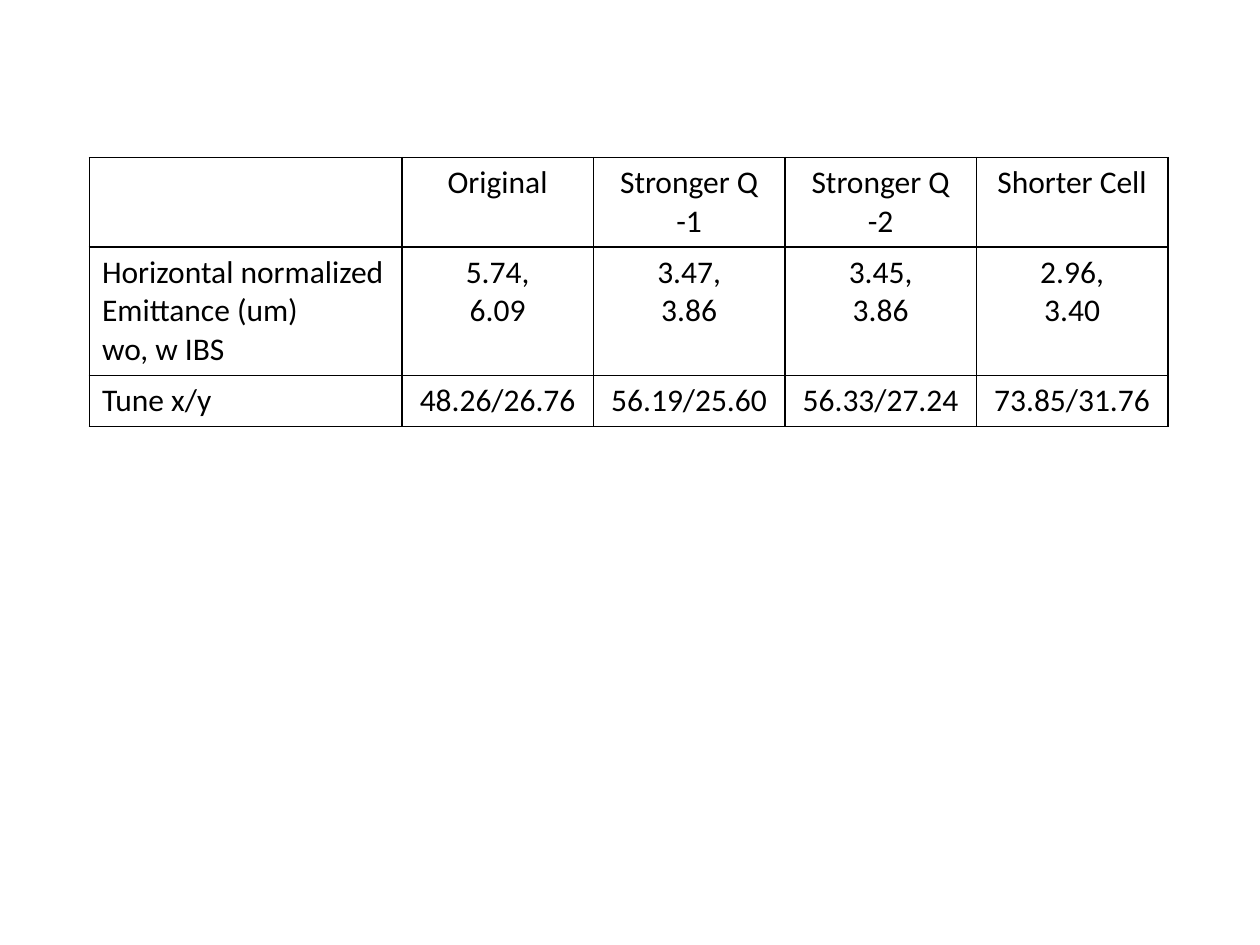
"""Build a slide with a bordered table comparing lattice options."""
from lxml import etree
from pptx import Presentation
from pptx.dml.color import RGBColor
from pptx.enum.text import PP_ALIGN
from pptx.oxml.ns import qn
from pptx.util import Inches, Pt

LEFT, CENTER = PP_ALIGN.LEFT, PP_ALIGN.CENTER
BLACK = RGBColor(0, 0, 0)
FONT, FONT_SIZE = "Calibri", Pt(18)
BORDER_WIDTH = Pt(1)

ROWS = [
    ["", "Original", "Stronger Q -1", "Stronger Q -2", "Shorter Cell"],
    ["Horizontal normalized Emittance (um)\nwo, w IBS",
     "5.74,\n6.09", "3.47,\n3.86", "3.45,\n3.86", "2.96,\n3.40"],
    ["Tune x/y", "48.26/26.76", "56.19/25.60", "56.33/27.24", "73.85/31.76"],
]
TABLE_LEFT, TABLE_TOP = 0.71, 1.25
LABEL_WIDTH, VALUE_WIDTH = 2.48, 1.52
ROW_HEIGHTS = [0.71, 1.02, 0.4]


def add_borders(cell):
    """Draw a solid line on every side of the cell."""
    properties = cell._tc.get_or_add_tcPr()
    for side in ("a:lnL", "a:lnR", "a:lnT", "a:lnB"):
        line = etree.SubElement(properties, qn(side), w=str(BORDER_WIDTH))
        fill = etree.SubElement(line, qn("a:solidFill"))
        etree.SubElement(fill, qn("a:srgbClr"), val=str(BLACK))


def fill_cell(cell, text, alignment):
    """Write and format the text of one cell."""
    add_borders(cell)
    cell.fill.background()
    cell.text_frame.text = text
    for paragraph in cell.text_frame.paragraphs:
        paragraph.alignment = alignment
        for run in paragraph.runs:
            run.font.name = FONT
            run.font.size = FONT_SIZE
            run.font.bold = False
            run.font.color.rgb = BLACK


def main():
    """Create and save the presentation."""
    presentation = Presentation()
    presentation.slide_width, presentation.slide_height = Inches(10), Inches(7.5)
    slide = presentation.slides.add_slide(presentation.slide_layouts[6])

    widths = [LABEL_WIDTH] + [VALUE_WIDTH] * (len(ROWS[0]) - 1)
    table = slide.shapes.add_table(
        len(ROWS), len(widths), Inches(TABLE_LEFT), Inches(TABLE_TOP),
        Inches(sum(widths)), Inches(sum(ROW_HEIGHTS))).table
    table.first_row = table.horz_banding = False
    for column, width in zip(table.columns, widths):
        column.width = Inches(width)
    for row, height, texts in zip(table.rows, ROW_HEIGHTS, ROWS):
        row.height = Inches(height)
        for index, (cell, text) in enumerate(zip(row.cells, texts)):
            fill_cell(cell, text, CENTER if index else LEFT)

    presentation.save("out.pptx")


if __name__ == "__main__":
    main()
